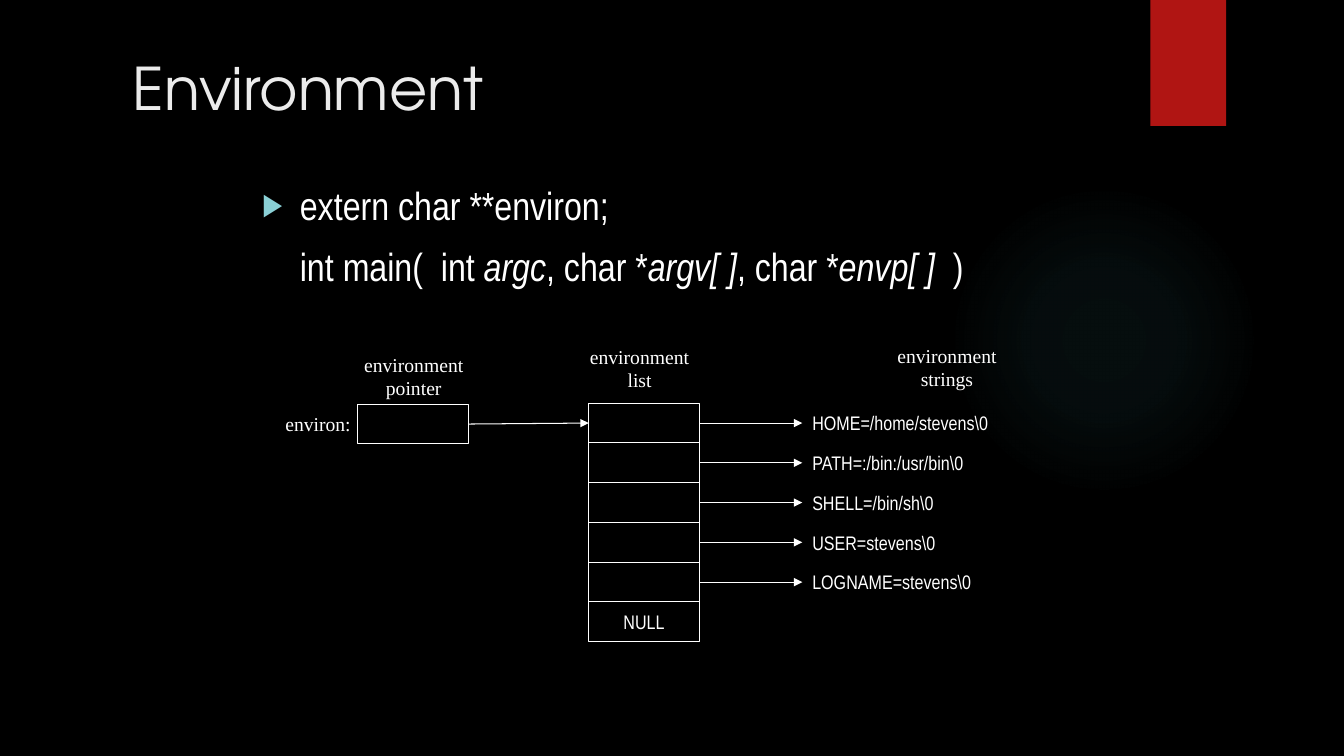
from lxml import etree
from pptx import Presentation
from pptx import util as u
from pptx.dml import color
from pptx.enum import shapes, text
from pptx.oxml import ns

Pt = u.Pt
WHITE, RED, TEAL, BLACK = "FFFFFF", "B01513", "50B9C1", "000000"
NARROW, SERIF, DISPLAY = "Arial Narrow", "Times New Roman", "TeX Gyre Adventor"
LEFT, CENTER = text.PP_ALIGN.LEFT, text.PP_ALIGN.CENTER
TOP, MIDDLE = text.MSO_ANCHOR.TOP, text.MSO_ANCHOR.MIDDLE

TITLE = "Environment"
DECLARATIONS = [
    [("extern char **environ;", False)],
    [("int main(  int ", False), ("argc", True), (", char *", False), ("argv[ ]", True),
     (", char *", False), ("envp[ ]  ", True), (")", False)],
]
STRINGS = ["HOME=/home/stevens\\0", "PATH=:/bin:/usr/bin\\0", "SHELL=/bin/sh\\0",
           "USER=stevens\\0", "LOGNAME=stevens\\0"]
LABELS = [
    (["environment", "pointer"], (252.7, 248.4, 85.7, 41)),
    (["environ:"], (196.6, 290.9, 61.2, 23.8)),
    (["environment", "list"], (414, 242.6, 85.7, 41)),
    (["environment", "strings"], (633.6, 241.9, 85.7, 41)),
]
GLOW_STOPS = [(0, 7), (36, 6), (69, 0)]

CELL_WIDTH, CELL_HEIGHT = 79.2, 28.4
LIST_LEFT, LIST_TOP = 420.5, 288
POINTER_LEFT, POINTER_TOP = 255.6, 288.7
STRING_LEFT, STRING_WIDTH = 573.1, 238.3

LABEL_FORMAT = {"name": SERIF, "size": Pt(14), "color": WHITE}
CELL_FORMAT = {"name": NARROW, "size": Pt(14), "color": WHITE}
BODY_FORMAT = {"name": NARROW, "size": Pt(28), "color": WHITE}
TITLE_FORMAT = {"name": DISPLAY, "size": Pt(42), "color": "EBEBEB"}


def rgb(value):
    return color.RGBColor.from_string(value)


def add_element(parent, tag, **attributes):
    return etree.SubElement(parent, ns.qn(tag), attributes)


def format_font(font, values):
    for name, value in values.items():
        if name == "color":
            font.color.rgb = rgb(value)
        else:
            setattr(font, name, value)


def place(shape, box):
    for name, value in zip(("left", "top", "width", "height"), box):
        setattr(shape, name, Pt(value))


def write(shape, lines, values, align=LEFT, anchor=TOP, wrap=False):
    frame = shape.text_frame
    frame.word_wrap = wrap
    frame.auto_size = text.MSO_AUTO_SIZE.NONE
    frame.vertical_anchor = anchor
    for index, line in enumerate(lines):
        paragraph = frame.add_paragraph() if index else frame.paragraphs[0]
        paragraph.alignment = align
        run = paragraph.add_run()
        run.text = line
        format_font(run.font, values)


def add_shape(slide, kind, box, fill=None, line=None):
    shape = slide.shapes.add_shape(kind, *map(Pt, box))
    shape.shadow.inherit = False
    if fill:
        shape.fill.solid()
        shape.fill.fore_color.rgb = rgb(fill)
    else:
        shape.fill.background()
    if line:
        shape.line.color.rgb = rgb(line)
        shape.line.width = Pt(0.75)
    else:
        shape.line.fill.background()
    return shape


def add_text(slide, box, lines, values, align=LEFT, anchor=TOP):
    write(slide.shapes.add_textbox(*map(Pt, box)), lines, values, align, anchor)


def add_arrow(slide, *ends):
    arrow = slide.shapes.add_connector(shapes.MSO_CONNECTOR.STRAIGHT, *map(Pt, ends))
    arrow.line.color.rgb = rgb(WHITE)
    arrow.line.width = Pt(0.75)
    add_element(arrow.line._get_or_add_ln(), "a:tailEnd", type="triangle")
    add_element(arrow._element.spPr, "a:effectLst")


def add_glow(slide):
    glow = add_shape(slide, shapes.MSO_SHAPE.OVAL, (677.5, 131.8, 221.8, 221.8))
    properties = glow._element.spPr
    gradient = etree.Element(ns.qn("a:gradFill"))
    stops = add_element(gradient, "a:gsLst")
    for position, opacity in GLOW_STOPS:
        stop = add_element(stops, "a:gs", pos=str(position * 1000))
        tint = add_element(stop, "a:srgbClr", val=TEAL)
        add_element(tint, "a:alpha", val=str(opacity * 1000))
    circle = add_element(gradient, "a:path", path="circle")
    add_element(circle, "a:fillToRect", l="50000", t="50000", r="50000", b="50000")
    properties.replace(properties.find(ns.qn("a:noFill")), gradient)


def fill_body(body):
    place(body, (180, 126, 642.2, 108))
    frame = body.text_frame
    frame.auto_size = text.MSO_AUTO_SIZE.NONE
    for index, runs in enumerate(DECLARATIONS):
        paragraph = frame.add_paragraph() if index else frame.paragraphs[0]
        paragraph.space_before = Pt(10 if index else 0)
        properties = paragraph._p.get_or_add_pPr()
        properties.set("marL", str(Pt(27)))
        properties.set("indent", str(Pt(0 if index else -27)))
        if index:
            add_element(properties, "a:buNone")
        else:
            add_element(add_element(properties, "a:buClr"), "a:srgbClr", val="8AD0D6")
            add_element(properties, "a:buSzPct", val="80000")
            add_element(properties, "a:buChar", char="▶")
        for content, italic in runs:
            run = paragraph.add_run()
            run.text = content
            format_font(run.font, {**BODY_FORMAT, "italic": italic})


def add_diagram(slide):
    rectangle = shapes.MSO_SHAPE.RECTANGLE
    list_right = LIST_LEFT + CELL_WIDTH
    add_shape(slide, rectangle, (POINTER_LEFT, POINTER_TOP, CELL_WIDTH, CELL_HEIGHT), line=WHITE)
    for row in range(len(STRINGS) + 1):
        top = LIST_TOP + row * CELL_HEIGHT
        middle = top + CELL_HEIGHT / 2
        cell = add_shape(slide, rectangle, (LIST_LEFT, top, CELL_WIDTH, CELL_HEIGHT), line=WHITE)
        if row == len(STRINGS):
            write(cell, ["NULL"], CELL_FORMAT, CENTER, MIDDLE)
        else:
            add_text(slide, (STRING_LEFT, top, STRING_WIDTH, CELL_HEIGHT), [STRINGS[row]],
                     CELL_FORMAT, anchor=MIDDLE)
            add_arrow(slide, list_right, middle, STRING_LEFT, middle)
    add_arrow(slide, POINTER_LEFT + CELL_WIDTH, POINTER_TOP + CELL_HEIGHT / 2,
              LIST_LEFT, LIST_TOP + CELL_HEIGHT / 2)
    for lines, box in LABELS:
        add_text(slide, box, lines, LABEL_FORMAT, CENTER)


def main():
    presentation = Presentation()
    presentation.slide_width, presentation.slide_height = Pt(960), Pt(540)
    slide = presentation.slides.add_slide(presentation.slide_layouts[1])
    slide.background.fill.solid()
    slide.background.fill.fore_color.rgb = rgb(BLACK)
    add_glow(slide)
    add_shape(slide, shapes.MSO_SHAPE.RECTANGLE, (821.8, 0, 54, 90), fill=RED)
    title, body = slide.placeholders
    place(title, (87.8, 33.1, 816.5, 87.1))
    write(title, [TITLE], TITLE_FORMAT, wrap=True)
    fill_body(body)
    add_diagram(slide)
    presentation.save("out.pptx")


if __name__ == "__main__":
    main()
